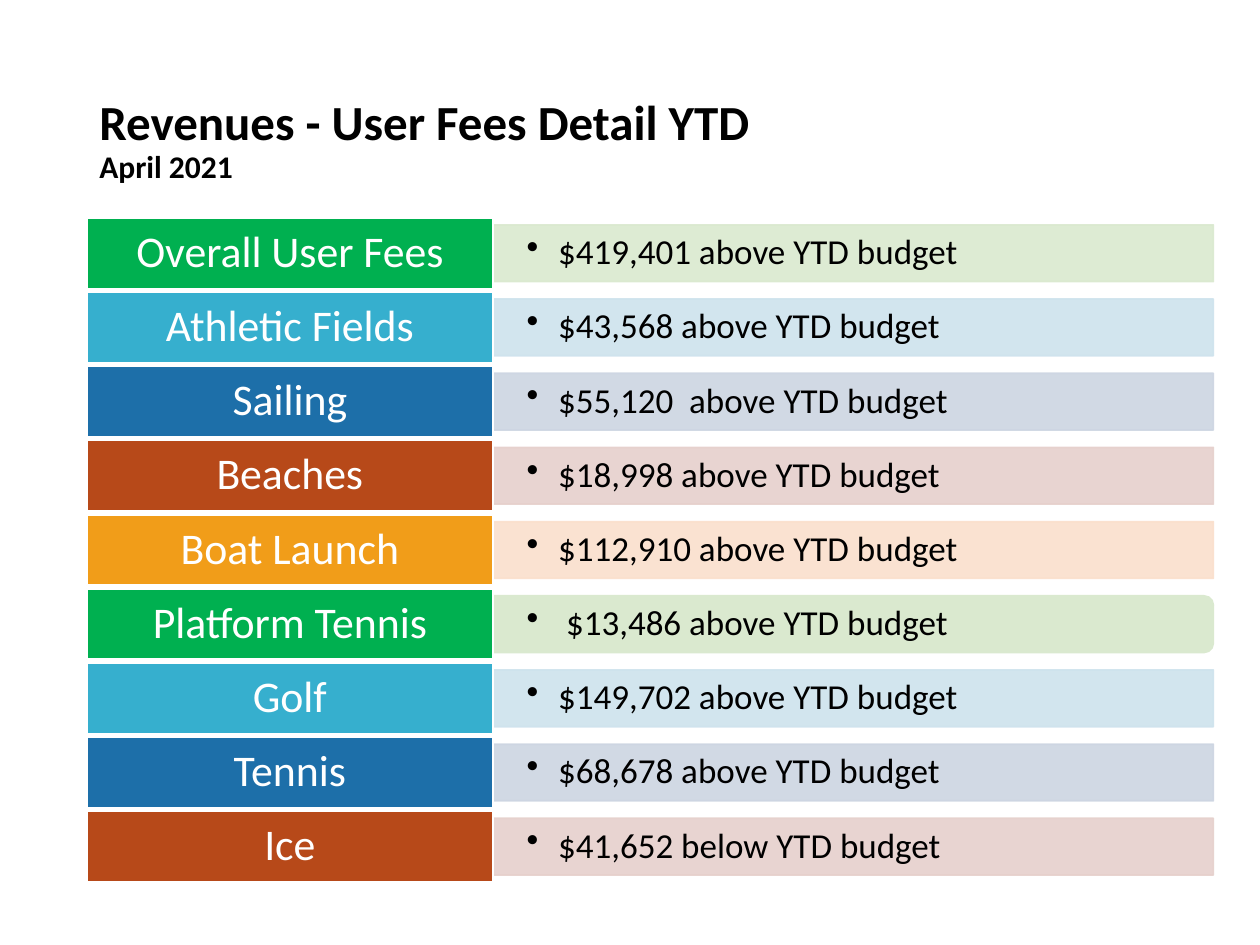
from typing import NamedTuple

from lxml import etree
from pptx import Presentation
from pptx.dml.color import RGBColor
from pptx.enum.shapes import MSO_SHAPE
from pptx.enum.text import MSO_ANCHOR, PP_ALIGN
from pptx.oxml.ns import qn
from pptx.util import Inches, Pt

RECT = MSO_SHAPE.RECTANGLE
ROUND_TOP = MSO_SHAPE.ROUND_2_SAME_RECTANGLE
MIDDLE = MSO_ANCHOR.MIDDLE
LEFT, CENTER = PP_ALIGN.LEFT, PP_ALIGN.CENTER

FONT = "Calibri"
BLACK = RGBColor(0x00, 0x00, 0x00)
WHITE = RGBColor(0xFF, 0xFF, 0xFF)
GREEN, PALE_GREEN = RGBColor(0x00, 0xB0, 0x50), RGBColor(0xDA, 0xE9, 0xCF)
CYAN, PALE_CYAN = RGBColor(0x36, 0xAF, 0xCE), RGBColor(0xCE, 0xE3, 0xED)
BLUE, PALE_BLUE = RGBColor(0x1D, 0x6F, 0xA9), RGBColor(0xCD, 0xD5, 0xE2)
RUST, PALE_RUST = RGBColor(0xB7, 0x49, 0x19), RGBColor(0xE6, 0xD0, 0xCC)
ORANGE, PALE_ORANGE = RGBColor(0xF1, 0x9D, 0x19), RGBColor(0xFA, 0xDF, 0xCC)

LEFT_EDGE = Inches(0.69)
FIRST_TOP, LAST_TOP = Inches(1.73), Inches(6.44)
LABEL_W, LABEL_H = Inches(3.22), Inches(0.56)
BAR_LEFT = LEFT_EDGE + LABEL_W
BAR_W, BAR_H = Inches(5.72), Inches(0.45)


class Fee(NamedTuple):
    name: str
    result: str
    color: RGBColor
    pale: RGBColor
    bar_shape: int = RECT
    bar_opacity: int = 90


FEES = [
    Fee("Overall User Fees", "$419,401 above YTD budget", GREEN, PALE_GREEN),
    Fee("Athletic Fields", "$43,568 above YTD budget", CYAN, PALE_CYAN),
    Fee("Sailing", "$55,120  above YTD budget", BLUE, PALE_BLUE),
    Fee("Beaches", "$18,998 above YTD budget", RUST, PALE_RUST),
    Fee("Boat Launch", "$112,910 above YTD budget", ORANGE, PALE_ORANGE),
    Fee("Platform Tennis", " $13,486 above YTD budget", GREEN, PALE_GREEN, ROUND_TOP, 100),
    Fee("Golf", "$149,702 above YTD budget", CYAN, PALE_CYAN),
    Fee("Tennis", "$68,678 above YTD budget", BLUE, PALE_BLUE),
    Fee("Ice", "$41,652 below YTD budget", RUST, PALE_RUST),
]


def add_run(p, text: str, *, size: int, color: RGBColor = BLACK, bold: bool = False) -> None:
    r = p.add_run()
    r.text = text
    r.font.name, r.font.size, r.font.bold = FONT, Pt(size), bold
    r.font.color.rgb = color


def set_frame(sp, *, align=LEFT, inset_x: float = 0.1, inset_y: float = 0.05):
    """Set up the text frame and return its first paragraph."""
    tf = sp.text_frame
    tf.word_wrap = True
    tf.vertical_anchor = MIDDLE
    tf.margin_left = tf.margin_right = Inches(inset_x)
    tf.margin_top = tf.margin_bottom = Inches(inset_y)
    p = tf.paragraphs[0]
    p.alignment, p.line_spacing = align, 0.9
    return p


def add_block(slide, kind, left: int, top: int, width: int, height: int,
              fill: RGBColor, line: RGBColor):
    sp = slide.shapes.add_shape(kind, left, top, width, height)
    sp.shadow.inherit = False
    sp.fill.solid()
    sp.fill.fore_color.rgb = fill
    sp.line.color.rgb = line
    sp.line.width = Pt(1)
    return sp


def set_opacity(sp, percent: int) -> None:
    for color in sp._element.spPr.iter(qn("a:srgbClr")):
        etree.SubElement(color, qn("a:alpha"), val=str(percent * 1000))


def add_bullet(p) -> None:
    pPr = p._p.get_or_add_pPr()
    pPr.set("marL", str(Inches(0.25)))
    pPr.set("indent", str(-Inches(0.25)))
    etree.SubElement(pPr, qn("a:buChar"), char="•")


def add_title(slide) -> None:
    sp = slide.shapes.add_textbox(LEFT_EDGE, Inches(0.4), Inches(8.94), Inches(1.45))
    p = set_frame(sp)
    add_run(p, "Revenues - User Fees Detail YTD", size=28, bold=True)
    p.add_line_break()
    add_run(p, "April 2021", size=18, bold=True)


def add_fee_row(slide, fee: Fee, top: int) -> None:
    middle = top + LABEL_H // 2

    # The bar is turned a quarter so that its rounded top faces right.
    bar = add_block(slide, fee.bar_shape, BAR_LEFT + (BAR_W - BAR_H) // 2,
                    middle - BAR_W // 2, BAR_H, BAR_W, fee.pale, fee.pale)
    bar.rotation = 90
    set_opacity(bar, fee.bar_opacity)

    box = slide.shapes.add_textbox(BAR_LEFT, middle - BAR_H // 2, BAR_W, BAR_H)
    p = set_frame(box, inset_x=0.27, inset_y=0.14)
    add_bullet(p)
    add_run(p, fee.result, size=20)

    label = add_block(slide, RECT, LEFT_EDGE, top, LABEL_W, LABEL_H, fee.color, WHITE)
    add_run(set_frame(label, align=CENTER), fee.name, size=25, color=WHITE)


def main() -> None:
    prs = Presentation()
    prs.slide_width, prs.slide_height = Inches(10), Inches(7.5)
    slide = prs.slides.add_slide(prs.slide_layouts[6])
    add_title(slide)
    pitch = (LAST_TOP - FIRST_TOP) // (len(FEES) - 1)
    for i, fee in enumerate(FEES):
        add_fee_row(slide, fee, FIRST_TOP + i * pitch)
    prs.save("out.pptx")


if __name__ == "__main__":
    main()
